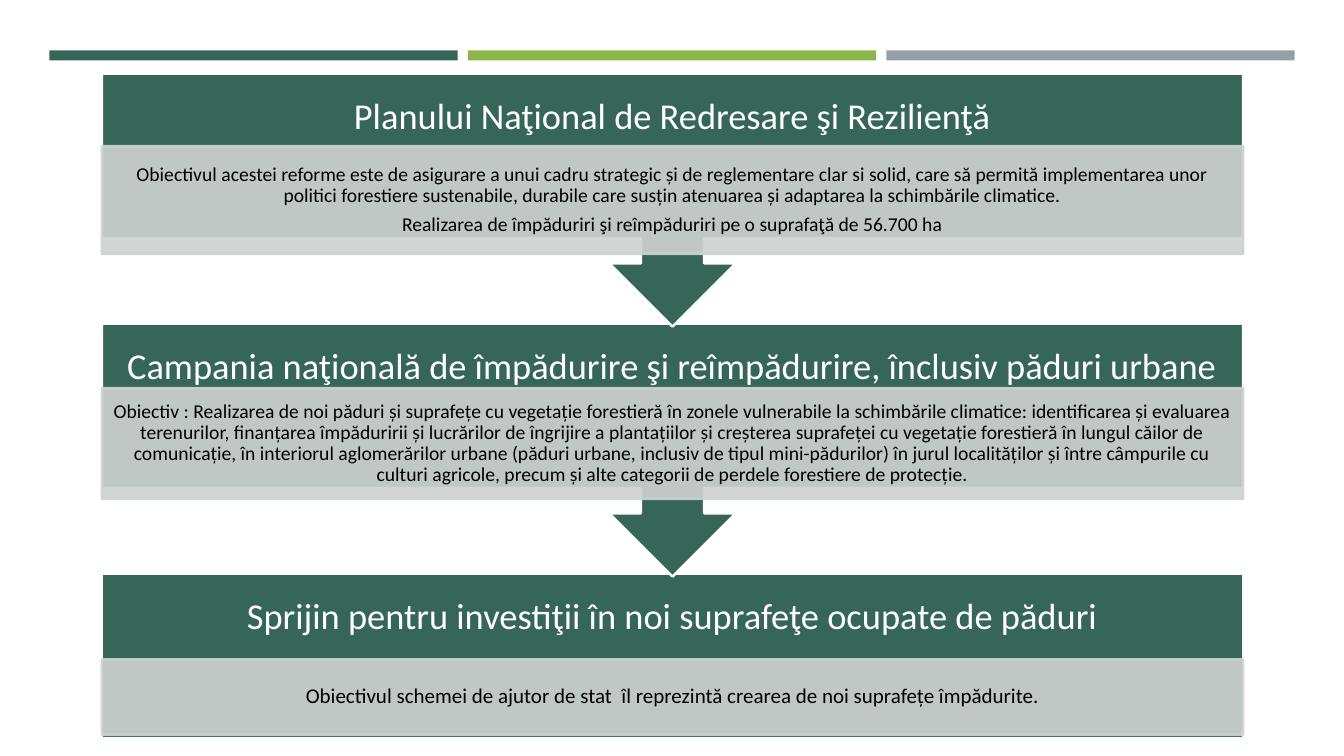
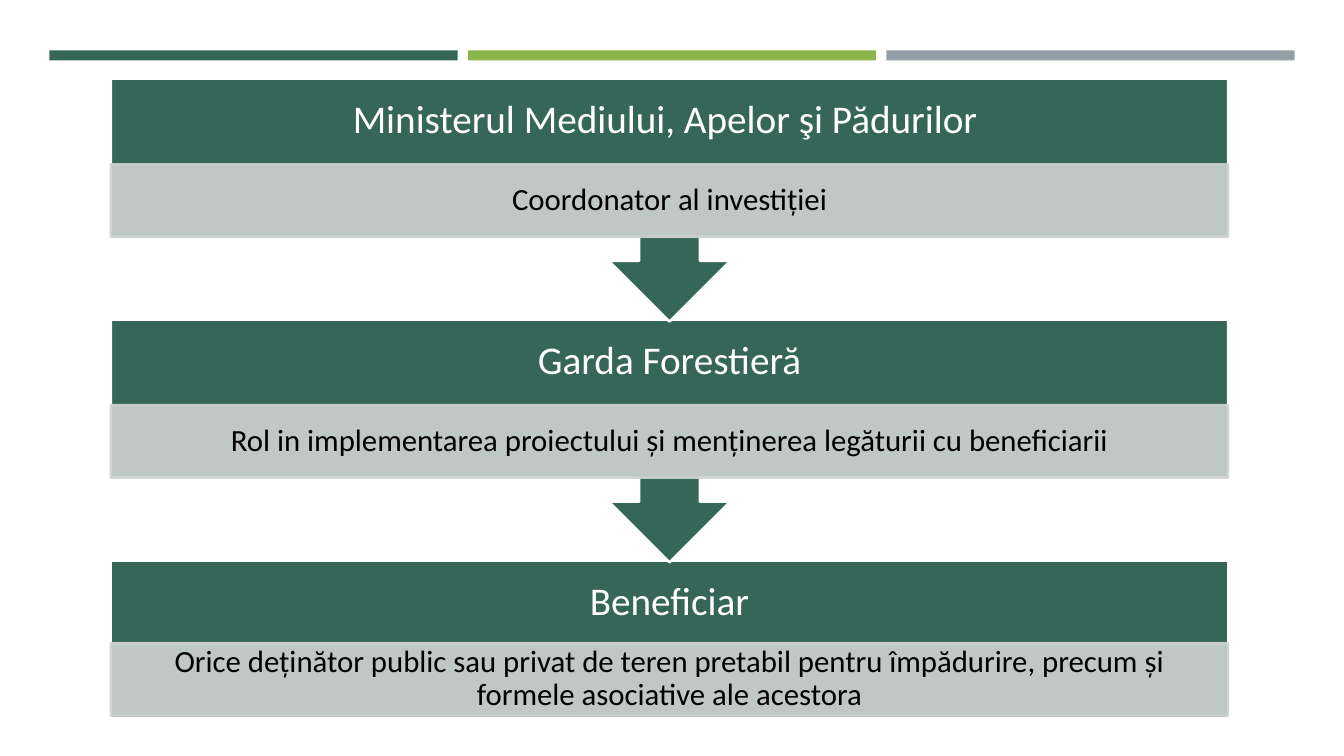
"""Build two slides of stepped callouts about afforestation in Romania."""
from dataclasses import dataclass

from lxml.etree import SubElement
from pptx import Presentation
from pptx.dml.color import RGBColor as Rgb
from pptx.enum.shapes import MSO_SHAPE as Kind
from pptx.enum.text import MSO_ANCHOR as Anchor, PP_ALIGN as Align
from pptx.oxml.ns import qn
from pptx.shapes.autoshape import Shape
from pptx.slide import Slide, SlideLayout
from pptx.text.text import TextFrame
from pptx.util import Inches, Pt


@dataclass(frozen=True)
class Theme:
    font: str = "Calibri"
    green: str = "366658"
    lime: str = "8CB64A"
    grey: str = "969FA7"
    pale: str = "CED3D1"
    white: str = "FFFFFF"
    black: str = "000000"
    line: float = 1.75
    alpha: int = 90
    small: int = 14
    body: int = 15
    large: int = 22
    head: int = 26
    title: int = 28


@dataclass(frozen=True)
class Step:
    head: str
    lines: tuple[str, ...]
    drop: float
    height: float
    size: int


@dataclass(frozen=True)
class Flow:
    left: float
    top: float
    width: float
    pitch: float
    height: float
    size: int
    inset: float
    pad: tuple[float, float]
    steps: tuple[Step, ...]


@dataclass(frozen=True)
class Box:
    left: float
    top: float
    width: float
    height: float

    def place(self) -> tuple[int, int, int, int]:
        """Return the box as slide lengths."""
        return (Inches(self.left), Inches(self.top),
                Inches(self.width), Inches(self.height))


THEME = Theme()
BODY = 0.65

PLANS = Flow(1.01, 0.73, 11.32, 2.48, 2.51, THEME.head, 0.2, (0.11, 0.02), (
    Step("Planului Naţional de Redresare şi Rezilienţă", (
        "Obiectivul acestei reforme este de asigurare a unui cadru strategic "
        "și de reglementare clar si solid, care să permită implementarea unor "
        "politici forestiere sustenabile, durabile care susțin atenuarea și "
        "adaptarea la schimbările climatice.",
        "Realizarea de împăduriri şi reîmpăduriri pe o suprafaţă de 56.700 ha",
    ), 0.72, 1.07, THEME.small),
    Step("Campania naţională de împădurire şi reîmpădurire, înclusiv păduri urbane", (
        "Obiectiv : Realizarea de noi păduri și suprafețe cu vegetație "
        "forestieră în zonele vulnerabile la schimbările climatice: "
        "identificarea și evaluarea terenurilor, finanțarea împăduririi și "
        "lucrărilor de îngrijire a plantațiilor și creșterea suprafeței cu "
        "vegetație forestieră în lungul căilor de comunicație, în interiorul "
        "aglomerărilor urbane (păduri urbane, inclusiv de tipul "
        "mini-pădurilor) în jurul localităților și între câmpurile cu culturi "
        "agricole, precum și alte categorii de perdele forestiere de protecție.",
    ), 0.64, 1.1, THEME.small),
    Step("Sprijin pentru investiţii în noi suprafeţe ocupate de păduri", (
        "Obiectivul schemei de ajutor de stat  îl reprezintă crearea de noi "
        "suprafețe împădurite.",
    ), 0.85, 0.75, THEME.body),
))

ROLES = Flow(1.1, 0.78, 11.08, 2.39, 2.41, THEME.title, 0.22, (0.17, 0.03), (
    Step("Ministerul Mediului, Apelor şi Pădurilor ",
         ("Coordonator al investiției",), 0.85, 0.72, THEME.large),
    Step("Garda Forestieră",
         ("Rol in implementarea proiectului și menținerea legăturii cu "
          "beneficiarii",), 0.85, 0.72, THEME.large),
    Step("Beneficiar",
         ("Orice deținător public sau privat de teren pretabil pentru "
          "împădurire, precum și formele asociative ale acestora",),
         0.82, 0.72, THEME.large),
))


def fade(shape: Shape) -> None:
    """Make the fill and line of a shape slightly transparent."""
    for tint in shape.element.spPr.iter(qn("a:srgbClr")):
        SubElement(tint, qn("a:alpha"), val=str(THEME.alpha * 1000))


def block(slide: Slide, kind: Kind, box: Box, fill: str, edge: str = "") -> Shape:
    """Draw a filled shape, with an outline if an edge colour is given."""
    shape = slide.shapes.add_shape(kind, *box.place())
    shape.shadow.inherit = False
    shape.fill.solid()
    shape.fill.fore_color.rgb = Rgb.from_string(fill)
    if edge:
        shape.line.color.rgb = Rgb.from_string(edge)
        shape.line.width = Pt(THEME.line)
    else:
        shape.line.fill.background()
    return shape


def write(frame: TextFrame, lines: tuple[str, ...], size: int, tint: str,
          pad: tuple[float, float]) -> None:
    """Write centred paragraphs into a text frame."""
    frame.word_wrap = True
    frame.vertical_anchor = Anchor.MIDDLE
    frame.margin_left = frame.margin_right = Inches(pad[0])
    frame.margin_top = frame.margin_bottom = Inches(pad[1])
    for rank, line in enumerate(lines):
        para = frame.add_paragraph() if rank else frame.paragraphs[0]
        para.alignment = Align.CENTER
        para.line_spacing = 0.9
        para.space_after = Pt(round(size * 0.35))
        run = para.add_run()
        run.text = line
        run.font.name = THEME.font
        run.font.size = Pt(size)
        run.font.color.rgb = Rgb.from_string(tint)


def bands(slide: Slide, layout: SlideLayout) -> None:
    """Put the three colour bands on the layout in place of its placeholders."""
    for holder in list(layout.placeholders):
        layout.shapes.element.remove(holder.element)
    for rank, tint in enumerate((THEME.green, THEME.lime, THEME.grey)):
        box = Box(0.49 + rank * 4.15, 0.5, 4.05, 0.1)
        band = block(slide, Kind.RECTANGLE, box, tint)
        layout.shapes.element.append(band.element)


def draw(slide: Slide, flow: Flow) -> None:
    """Draw the steps of a flow from the last to the first."""
    last = len(flow.steps) - 1
    for rank, step in reversed(list(enumerate(flow.steps))):
        top = flow.top + rank * flow.pitch
        end = rank == last
        tall = flow.height * (BODY if end else 1)
        kind = Kind.RECTANGLE if end else Kind.UP_ARROW_CALLOUT
        card = block(slide, kind, Box(flow.left, top, flow.width, tall),
                     THEME.green, THEME.white)
        card.rotation = 0 if end else 180
        area = Box(flow.left, top, flow.width, flow.height * (1 - BODY))
        head = slide.shapes.add_textbox(*area.place())
        write(head.text_frame, (step.head,), flow.size, THEME.white,
              (flow.inset, flow.inset))
        area = Box(flow.left, top + step.drop, flow.width, step.height)
        note = block(slide, Kind.RECTANGLE, area, THEME.pale, THEME.pale)
        fade(note)
        write(note.text_frame, step.lines, step.size, THEME.black, flow.pad)


def main() -> None:
    """Build and save the slides."""
    deck = Presentation()
    deck.slide_width, deck.slide_height = Inches(13.33), Inches(7.5)
    blank = deck.slide_layouts[6]
    slides = [deck.slides.add_slide(blank) for _ in range(2)]
    bands(slides[0], blank)
    for slide, flow in zip(slides, (PLANS, ROLES)):
        draw(slide, flow)
    deck.save("out.pptx")


if __name__ == "__main__":
    main()
